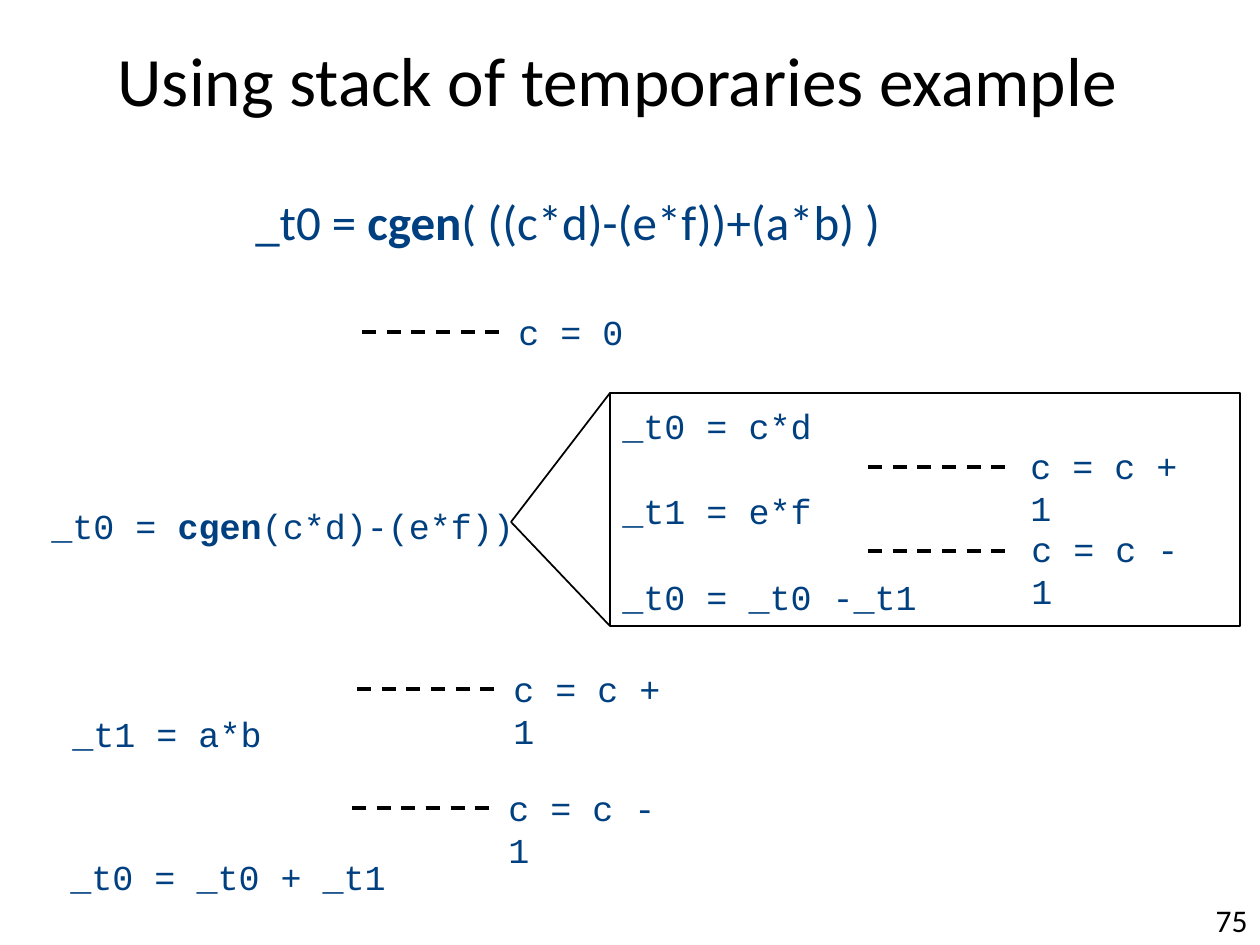
from lxml.etree import SubElement
from pptx import Presentation
from pptx.dml.color import RGBColor
from pptx.enum.dml import MSO_LINE
from pptx.enum.shapes import MSO_CONNECTOR, MSO_SHAPE
from pptx.enum.text import MSO_ANCHOR, PP_ALIGN
from pptx.oxml.ns import qn
from pptx.util import Emu, Pt

PX_PER_INCH = 126
COLORS = {"black": "000000", "code": "004080"}
SANS, MONO = "Calibri", "Courier New"

TITLE = "Using stack of temporaries example"
PAGE = "75"
# Each text is a list of lines; each line is a list of (text, bold) runs.
GOAL = [[("_t0 = ", False), ("cgen", True), ("( ((c*d)-(e*f))+(a*b) )", False)]]
CALL = [[("_t0 = ", False), ("cgen", True), ("(c*d)-(e*f))", False)]]
EXPANSION = [[("_t0 = c*d", False)], [("_t1 = e*f", False)], [("_t0 = _t0 -_t1", False)]]

# left, top, width, height in px
CODE = [
    (CALL, (39, 498, 491, 55)),
    (EXPANSION, (610, 398, 323, 224)),
    ([[("_t1 = a*b", False)]], (60, 706, 217, 55)),
    ([[("_t0 = _t0 + _t1", False)]], (58, 849, 344, 55)),
]
# counter text, text left, text top, dash left, dash y
COUNTERS = [
    ("c = 0", 506, 304, 362, 332),
    ("c = c + 1", 1018, 438, 868, 467),
    ("c = c - 1", 1019, 521, 868, 551),
    ("c = c + 1", 501, 661, 357, 689),
    ("c = c - 1", 496, 780, 352, 808),
]
COUNTER_SIZE = (214, 54)
DASH_LENGTH = 139
FRAME = (610, 393, 630, 233)
CALL_END = (511, 522)


def px(n):
    return Emu(round(n * 914400 / PX_PER_INCH))


def rgb(name):
    return RGBColor.from_string(COLORS[name])


def style(p, font, size, color):
    p.font.name, p.font.size = font, Pt(size)
    p.font.color.rgb = rgb(color)


def add_text(slide, lines, box, font=MONO, size=20, color="code", wrap=False, gap=0):
    """Add a text box; gap is the space in points between its lines."""
    tf = slide.shapes.add_textbox(*map(px, box)).text_frame
    tf.word_wrap = wrap
    for i, runs in enumerate(lines):
        p = tf.add_paragraph() if i else tf.paragraphs[0]
        style(p, font, size, color)
        if i:
            p.space_before = Pt(gap)
        for text, bold in runs:
            r = p.add_run()
            r.text = text
            if bold:
                r.font.bold = True
    return tf


def add_line(slide, start, end, width=1, dashed=False):
    line = slide.shapes.add_connector(MSO_CONNECTOR.STRAIGHT, *map(px, start + end))
    line.line.color.rgb = rgb("black")
    line.line.width = Pt(width)
    if dashed:
        line.line.dash_style = MSO_LINE.DASH
    SubElement(line._element.spPr, qn("a:effectLst"))


def add_callout(slide):
    """Frame the expansion and join it to the end of the call."""
    sp = slide.shapes.add_shape(MSO_SHAPE.RECTANGLE, *map(px, FRAME))
    sp.shadow.inherit = False
    sp.fill.background()
    sp.line.color.rgb = rgb("black")
    sp.line.width = Pt(1)
    left, top, _, height = FRAME
    for y in (top, top + height):
        add_line(slide, CALL_END, (left, y))


def main():
    prs = Presentation()
    prs.slide_width, prs.slide_height = px(1260), px(945)
    slide = prs.slides.add_slide(prs.slide_layouts[5])

    title = slide.shapes.title
    title.left, title.top, title.width, title.height = map(px, (82, 0, 1071, 158))
    tf = title.text_frame
    tf.text = TITLE
    tf.vertical_anchor = MSO_ANCHOR.MIDDLE
    tf.paragraphs[0].alignment = PP_ALIGN.CENTER
    style(tf.paragraphs[0], SANS, 39.6, "black")

    page = add_text(slide, [[(PAGE, False)]], (1196, 895, 64, 50), SANS, 18, "black", wrap=True)
    page.paragraphs[0].alignment = PP_ALIGN.RIGHT
    add_text(slide, GOAL, (243, 185, 658, 72), SANS, 28)

    for lines, box in CODE:
        add_text(slide, lines, box, gap=25)
    for text, left, top, x, y in COUNTERS:
        add_text(slide, [[(text, False)]], (left, top) + COUNTER_SIZE, wrap=True)
        add_line(slide, (x, y), (x + DASH_LENGTH, y), 2, dashed=True)
    add_callout(slide)
    prs.save("out.pptx")


if __name__ == "__main__":
    main()
